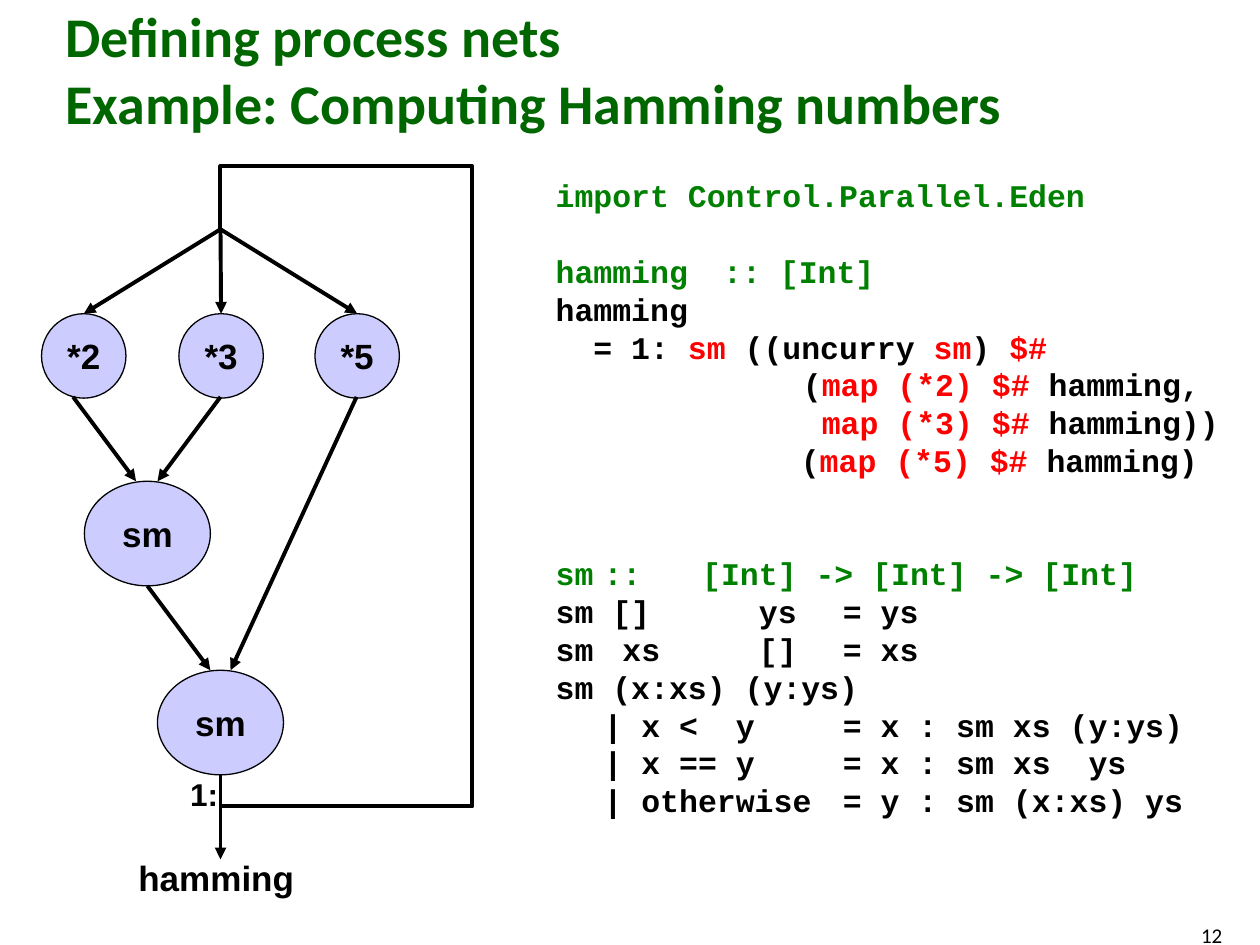
from dataclasses import dataclass

from lxml import etree
from pptx import Presentation
from pptx.dml.color import RGBColor
from pptx.enum.shapes import MSO_CONNECTOR, MSO_SHAPE
from pptx.enum.text import MSO_ANCHOR, MSO_AUTO_SIZE, PP_ALIGN
from pptx.oxml.ns import qn
from pptx.util import Inches, Pt

STRAIGHT = MSO_CONNECTOR.STRAIGHT
OVAL = MSO_SHAPE.OVAL
MIDDLE, TOP = MSO_ANCHOR.MIDDLE, MSO_ANCHOR.TOP
LEFT, CENTER, RIGHT = PP_ALIGN.LEFT, PP_ALIGN.CENTER, PP_ALIGN.RIGHT
NO_FIT = MSO_AUTO_SIZE.NONE

BLACK, GREEN, RED = "000000", "008000", "FF0000"
DARK, LILAC = "006600", "CCCCFF"
PITCH = 21.6
INDENT = 0.38
TAB = 0.95 / 3


@dataclass
class Node:
    name: str
    text: str
    x: float
    y: float
    w: float = 0.67
    h: float = 0.67


@dataclass
class Edge:
    start: tuple[float, float]
    end: tuple[float, float]
    node: str = ""


@dataclass
class Label:
    text: str
    x: float
    y: float
    w: float
    h: float
    size: int
    font: str = "Arial"
    bold: bool = True
    align: PP_ALIGN = LEFT


@dataclass
class Line:
    runs: list[tuple[str, str]]
    gap: int = 0


NODES = [
    Node("two", "*2", 0.33, 2.49),
    Node("three", "*3", 1.42, 2.49),
    Node("five", "*5", 2.5, 2.49),
    Node("inner", "sm", 0.67, 3.82, 1, 0.83),
    Node("outer", "sm", 1.25, 5.32, 1, 0.83),
]
FORK = (1.75, 1.82)
EDGES = [
    Edge(FORK, (0.67, 2.49), "two"),
    Edge(FORK, (1.75, 2.49), "three"),
    Edge(FORK, (2.83, 2.49), "five"),
    Edge((0.58, 3.15), (1.08, 3.82)),
    Edge((1.75, 3.15), (1.25, 3.82)),
    Edge((2.83, 3.15), (1.83, 5.32)),
    Edge((1.17, 4.65), (1.67, 5.32)),
    Edge((1.75, 6.15), (1.75, 6.82)),
]
LOOP = [(1.75, 6.4), (3.75, 6.4), (3.75, 1.32), (1.75, 1.32), FORK]
LABELS = [
    Label("1:", 1.41, 6.1, 0.42, 0.4, 18),
    Label("hamming", 1, 6.75, 1.44, 0.43, 20),
    Label("12", 7.47, 7.27, 2.33, 0.22, 12, "Calibri", False, RIGHT),
]
CODE = [
    Line([("import Control.Parallel.Eden", GREEN)]),
    Line([("hamming \t:: [Int]", GREEN)], 1),
    Line([("hamming", BLACK)]),
    Line([("  = 1: ", BLACK), ("sm", RED), (" ((uncurry ", BLACK),
          ("sm", RED), (")", BLACK), (" $#", RED)]),
    Line([("\t\t\t\t\t\t(", BLACK), ("map (*2) $# ", RED), ("hamming,", BLACK)]),
    Line([("\t\t\t\t \t\t ", BLACK), ("map (*3) $# ", RED), ("hamming))", BLACK)]),
    Line([("\t\t\t\t\t  (", BLACK), ("map (*5) $# ", RED), ("hamming)", BLACK)]),
    Line([("sm\t:: \t [Int] -> [Int] -> [Int]", GREEN)], 2),
    Line([("sm []\t    ys \t= ys", BLACK)]),
    Line([("sm\t xs\t    [] \t= xs", BLACK)]),
    Line([("sm (x:xs) (y:ys)", BLACK)]),
    Line([("\t| x <  y   \t= x : sm xs (y:ys)", BLACK)]),
    Line([("\t| x == y  \t\t= x : sm xs  ys", BLACK)]),
    Line([("\t| otherwise\t= y : sm (x:xs) ys", BLACK)]),
]


def color(code: str) -> RGBColor:
    return RGBColor.from_string(code)


def place(shape, x: float, y: float, w: float, h: float) -> None:
    shape.left, shape.top = Inches(x), Inches(y)
    shape.width, shape.height = Inches(w), Inches(h)


def add_run(para, text: str, font: str, size: int, code: str, bold: bool = True) -> None:
    run = para.add_run()
    run.text = text
    run.font.name, run.font.size, run.font.bold = font, Pt(size), bold
    run.font.color.rgb = color(code)


def add_title(shape) -> None:
    place(shape, 0.42, 0.08, 9.25, 0.93)
    frame = shape.text_frame
    frame.auto_size, frame.vertical_anchor = NO_FIT, MIDDLE
    para = frame.paragraphs[0]
    para.alignment = LEFT
    add_run(para, "Defining process nets", "Calibri", 32, DARK)
    para.add_line_break()
    add_run(para, "Example: Computing Hamming numbers", "Calibri", 32, DARK)


def set_tabs(para) -> None:
    props = para._p.get_or_add_pPr()
    props.set("marL", str(Inches(INDENT)))
    props.set("indent", str(Inches(-INDENT)))
    props.set("defTabSz", str(Inches(TAB)))
    etree.SubElement(props, qn("a:buNone"))


def add_code(shape) -> None:
    place(shape, 4.31, 1.35, 5.61, 5.92)
    frame = shape.text_frame
    frame.auto_size, frame.vertical_anchor = NO_FIT, TOP
    for i, line in enumerate(CODE):
        para = frame.add_paragraph() if i else frame.paragraphs[0]
        set_tabs(para)
        para.alignment = LEFT
        para.line_spacing = Pt(PITCH)
        para.space_before = Pt(PITCH * line.gap)
        for text, code in line.runs:
            add_run(para, text, "Courier New", 18, code)


def add_node(slide, node: Node):
    oval = slide.shapes.add_shape(
        OVAL, Inches(node.x), Inches(node.y), Inches(node.w), Inches(node.h))
    oval.shadow.inherit = False
    oval.fill.solid()
    oval.fill.fore_color.rgb = color(LILAC)
    oval.line.color.rgb = color(BLACK)
    oval.line.width = Pt(0.75)
    frame = oval.text_frame
    frame.word_wrap, frame.vertical_anchor = False, MIDDLE
    para = frame.paragraphs[0]
    para.alignment = CENTER
    add_run(para, node.text, "Arial", 20, BLACK)
    return oval


def add_edge(slide, edge: Edge, ovals: dict) -> None:
    link = slide.shapes.add_connector(
        STRAIGHT, *[Inches(v) for v in edge.start + edge.end])
    if edge.node:
        link.end_connect(ovals[edge.node], 0)
    link.line.color.rgb = color(BLACK)
    link.line.width = Pt(2.25)
    etree.SubElement(link.line._get_or_add_ln(), qn("a:tailEnd"), type="triangle")
    etree.SubElement(link._element.spPr, qn("a:effectLst"))


def add_loop(slide) -> None:
    first, *rest = [(Inches(x), Inches(y)) for x, y in LOOP]
    pen = slide.shapes.build_freeform(*first)
    pen.add_line_segments(rest, close=False)
    loop = pen.convert_to_shape()
    loop.shadow.inherit = False
    loop.fill.background()
    loop.line.color.rgb = color(BLACK)
    loop.line.width = Pt(2.25)


def add_label(slide, label: Label) -> None:
    box = slide.shapes.add_textbox(
        Inches(label.x), Inches(label.y), Inches(label.w), Inches(label.h))
    box.text_frame.word_wrap = label.align == RIGHT
    para = box.text_frame.paragraphs[0]
    para.alignment = label.align
    add_run(para, label.text, label.font, label.size, BLACK, label.bold)


def main() -> None:
    deck = Presentation()
    deck.slide_width, deck.slide_height = Inches(10), Inches(7.5)
    slide = deck.slides.add_slide(deck.slide_layouts[1])
    add_title(slide.shapes.title)
    add_code(slide.placeholders[1])
    ovals = {node.name: add_node(slide, node) for node in NODES}
    for edge in EDGES:
        add_edge(slide, edge, ovals)
    add_loop(slide)
    for label in LABELS:
        add_label(slide, label)
    deck.save("out.pptx")


if __name__ == "__main__":
    main()
